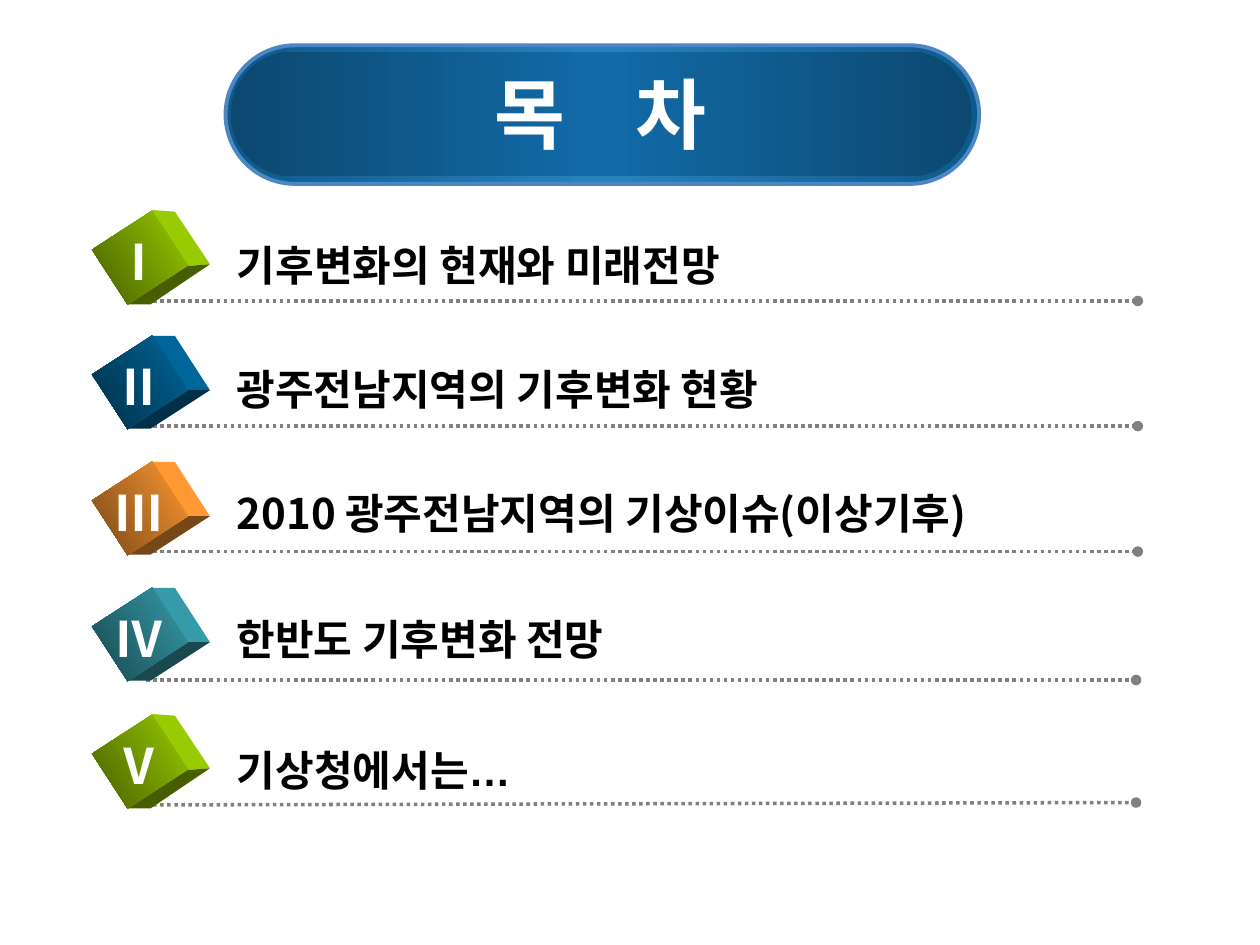
from math import cos, radians, sin

from lxml.etree import SubElement
from pptx import Presentation
from pptx.dml.color import RGBColor
from pptx.enum.dml import MSO_LINE
from pptx.enum.shapes import MSO_CONNECTOR, MSO_SHAPE
from pptx.enum.text import MSO_ANCHOR, PP_ALIGN
from pptx.oxml import parse_xml
from pptx.oxml.ns import nsdecls, qn
from pptx.util import Pt

THEME = {
    "white": "FFFFFF", "text": "000000", "rule": "808080", "banner_line": "4B87C3",
    "lime": ("99CC00", "475E00"), "navy": ("006699", "002F47"),
    "orange": ("FF9933", "764718"), "teal": ("359BA9", "19484E"),
    "banner_outer": [(0, "0F598B", 100), (50, "1476B8", 90), (100, "0F598B", 100)],
    "banner_inner": [(0, "0C4870", 100), (50, "126BA8", 100), (100, "0C4870", 100)],
    "title_size": 44, "numeral_size": 28, "item_size": 24,
    "korean": "Noto Sans CJK KR", "numeral": "Noto Sans CJK JP", "latin": "Arial",
}
TITLE = ("목", " ", "차")
TITLE_GAP = 30
# numeral, wording, font, colours, cube top, text top, text width, rule start and end heights, rule right
ITEMS = [
    ("Ⅰ", "기후변화의 현재와 미래전망", "korean", "lime", 126.7, 133.2, 315.4, 172, 172, 650.2),
    ("Ⅱ", "광주전남지역의 기후변화 현황", "korean", "navy", 198, 203.8, 335.5, 243.5, 243.5, 650.2),
    ("Ⅲ", "2010 광주전남지역의 기상이슈(이상기후)", "korean", "orange", 270, 275, 455.8, 315.2, 315.2, 650.2),
    ("Ⅳ", "한반도 기후변화 전망", "korean", "teal", 342, 347, 458.6, 388.6, 388.6, 649.2),
    ("Ⅴ", "기상청에서는…", "latin", "lime", 414.7, 421.9, 181.4, 460, 458.6, 649.2),
]
CUBE_LEFT, CUBE_WIDTH, CUBE_HEIGHT, CUBE_TURN = 61.2, 37.4, 41, 57
CUBE_DEPTH = (13, 0.5)


def fill_gradient(shape, stops, angle):
    """Fill a shape with a linear gradient of (position, colour, opacity) stops."""
    shape.fill.background()
    stop_xml = "".join(
        f'<a:gs pos="{position * 1000}"><a:srgbClr val="{color}">'
        f'<a:alpha val="{opacity * 1000}"/></a:srgbClr></a:gs>'
        for position, color, opacity in stops)
    gradient = parse_xml(
        f'<a:gradFill {nsdecls("a")} rotWithShape="1"><a:gsLst>{stop_xml}</a:gsLst>'
        f'<a:lin ang="{angle * 60000}" scaled="0"/></a:gradFill>')
    properties = shape.fill._xPr
    properties.replace(properties.find(qn("a:noFill")), gradient)


def add_text(slide, box, runs, size, font, color, align=PP_ALIGN.LEFT, wrap=False):
    """Add one bold line of text, centred vertically in its box, and return its runs."""
    text_frame = slide.shapes.add_textbox(*map(Pt, box)).text_frame
    text_frame.word_wrap = wrap
    text_frame.vertical_anchor = MSO_ANCHOR.MIDDLE
    paragraph = text_frame.paragraphs[0]
    paragraph.alignment = align
    for text in runs:
        run = paragraph.add_run()
        run.text = text
        run.font.size, run.font.bold = Pt(size), True
        run.font.color.rgb = RGBColor.from_string(color)
        run.font.name = font
        SubElement(run.font._element, qn("a:ea")).set("typeface", font)
    return paragraph.runs


def add_banner(slide):
    """Add the two-layer title banner and its spaced title."""
    layers = [((128.9, 25.9, 430.6, 79.2), "banner_outer"), ((131.8, 29.5, 423.4, 71.3), "banner_inner")]
    for box, stops in layers:
        shape = slide.shapes.add_shape(MSO_SHAPE.ROUNDED_RECTANGLE, *map(Pt, box))
        shape.adjustments[0] = 0.5
        shape.shadow.inherit = False
        fill_gradient(shape, THEME[stops], 0)
        if stops == "banner_outer":
            shape.line.color.rgb = RGBColor.from_string(THEME["banner_line"])
            shape.line.width = Pt(2.25)
        else:
            shape.line.fill.background()
    runs = add_text(slide, (127.4, 34.6, 431.3, 59.8), TITLE, THEME["title_size"],
                    THEME["korean"], THEME["white"], PP_ALIGN.CENTER, True)
    runs[1].font._element.set("spc", str(TITLE_GAP * 100))


def add_rule(slide, start, end):
    """Add a dotted rule that ends in a round dot."""
    connector = slide.shapes.add_connector(MSO_CONNECTOR.STRAIGHT, *map(Pt, start + end))
    connector.line.color.rgb = RGBColor.from_string(THEME["rule"])
    connector.line.width = Pt(2)
    connector.line.dash_style = MSO_LINE.ROUND_DOT
    SubElement(connector.line._get_or_add_ln(), qn("a:tailEnd")).set("type", "oval")
    SubElement(connector._element.spPr, qn("a:effectLst"))


def add_cube(slide, top, colors):
    """Add a turned square face with a bright right side and a dark lower side."""
    bright, dark = colors
    center_x, center_y = CUBE_LEFT + CUBE_WIDTH / 2, top + CUBE_HEIGHT / 2
    cosine, sine = cos(radians(CUBE_TURN)), sin(radians(CUBE_TURN))

    def corner(side_x, side_y):
        x, y = side_x * CUBE_WIDTH / 2, side_y * CUBE_HEIGHT / 2
        return center_x + x * cosine - y * sine, center_y + x * sine + y * cosine

    peak, right, bottom = corner(-1, -1), corner(1, -1), corner(1, 1)
    for first, second, color in [(peak, right, bright), (right, bottom, dark)]:
        back = [(x + CUBE_DEPTH[0], y + CUBE_DEPTH[1] * (1 if y < center_y else -1))
                for x, y in (second, first)]
        builder = slide.shapes.build_freeform(*first, scale=Pt(1))
        builder.add_line_segments([second, *back])
        side = builder.convert_to_shape()
        side.shadow.inherit = False
        side.fill.solid()
        side.fill.fore_color.rgb = RGBColor.from_string(color)
        side.line.fill.background()
    face = slide.shapes.add_shape(MSO_SHAPE.RECTANGLE, *map(Pt, (CUBE_LEFT, top, CUBE_WIDTH, CUBE_HEIGHT)))
    face.rotation = CUBE_TURN
    face.shadow.inherit = False
    face.line.fill.background()
    fill_gradient(face, [(0, bright, 100), (100, dark, 100)], 90)


def main():
    """Build the contents slide."""
    presentation = Presentation()
    presentation.slide_width, presentation.slide_height = Pt(720), Pt(540)
    slide = presentation.slides.add_slide(presentation.slide_layouts[6])
    add_banner(slide)
    for numeral, wording, font, colors, cube_top, text_top, width, start_y, end_y, right in ITEMS:
        add_rule(slide, (83.5, start_y), (right, end_y))
        add_cube(slide, cube_top, THEME[colors])
        add_text(slide, (128.2, text_top, width, 36.4), [wording], THEME["item_size"],
                 THEME[font], THEME["text"])
        add_text(slide, (58.3, cube_top + 1.8, 42.5, 41), [numeral], THEME["numeral_size"],
                 THEME["numeral"], THEME["white"], PP_ALIGN.CENTER)
    presentation.save("out.pptx")


if __name__ == "__main__":
    main()
